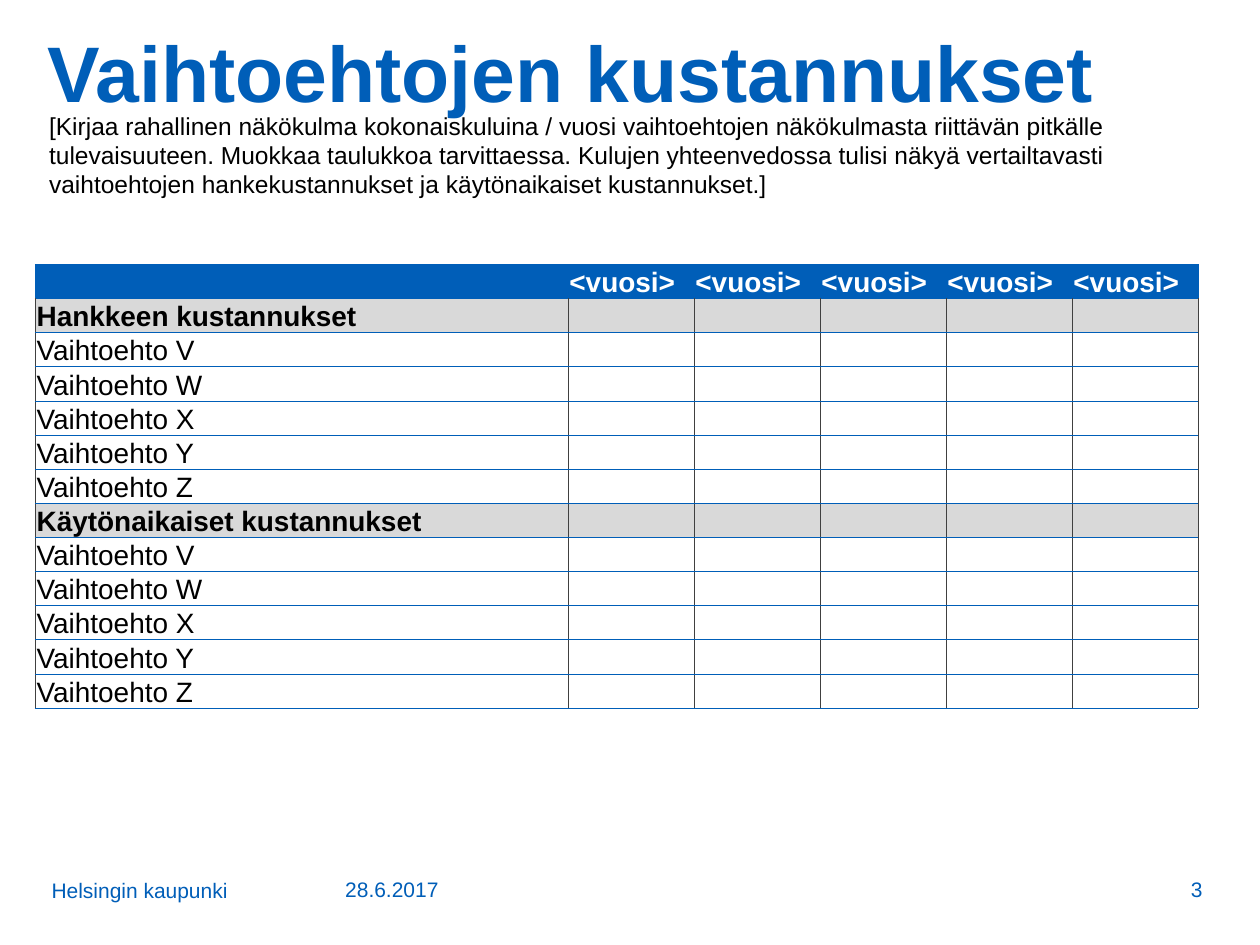
from lxml import etree
from pptx import Presentation
from pptx.dml.color import RGBColor
from pptx.enum.text import MSO_ANCHOR, PP_ALIGN
from pptx.oxml.ns import qn
from pptx.util import Cm, Pt

TOP, BOTTOM = MSO_ANCHOR.TOP, MSO_ANCHOR.BOTTOM
LEFT, RIGHT = PP_ALIGN.LEFT, PP_ALIGN.RIGHT
FONT = "Arial"
COLORS = {"blue": "005EB8", "grey": "D9D9D9", "dark": "404040",
          "black": "000000", "white": "FFFFFF"}

TITLE = "Vaihtoehtojen kustannukset"
GUIDE = ("[Kirjaa rahallinen näkökulma kokonaiskuluina / vuosi vaihtoehtojen "
         "näkökulmasta riittävän pitkälle tulevaisuuteen. Muokkaa taulukkoa "
         "tarvittaessa. Kulujen yhteenvedossa tulisi näkyä vertailtavasti "
         "vaihtoehtojen hankekustannukset ja käytönaikaiset kustannukset.]")
GROUPS = ["Hankkeen kustannukset", "Käytönaikaiset kustannukset"]
OPTIONS = [f"Vaihtoehto {name}" for name in "VWXYZ"]
YEARS = ["<vuosi>"] * 5
# text, (left, top, width, height) in cm, alignment
FOOTER = [
    ("Helsingin kaupunki", (0.79, 17.02, 5.92, 1.3), LEFT),
    ("28.6.2017", (6.71, 17.32, 3.94, 0.99), LEFT),
    ("3", (21.49, 17.32, 3, 0.99), RIGHT),
]
TABLE_AT = (0.71, 5.33)
LABEL_W, YEAR_W, ROW_H = 10.74, 2.54, 0.65


def write(frame, text, size=16, color="black", bold=False, align=LEFT, space=None):
    para = frame.paragraphs[0]
    para.alignment = align
    if space:
        para.line_spacing = space
    if not text:  # an empty cell keeps the row low only with its own size
        etree.SubElement(para._p, qn("a:endParaRPr"), sz=str(size * 100))
        return
    run = para.add_run()
    run.text = text
    font = run.font
    font.name, font.size, font.bold = FONT, Pt(size), bold
    font.color.rgb = RGBColor.from_string(COLORS[color])


def add_box(slide, text, place, inset=(0.25, 0.13), anchor=TOP, **style):
    frame = slide.shapes.add_textbox(*map(Cm, place)).text_frame
    frame.word_wrap = True
    frame.vertical_anchor = anchor
    frame.margin_left = frame.margin_right = Cm(inset[0])
    frame.margin_top = frame.margin_bottom = Cm(inset[1])
    write(frame, text, **style)


def set_edges(cell, sides):
    props = cell._tc.get_or_add_tcPr()
    for spot, (side, color) in enumerate(sides.items()):
        line = etree.Element(qn(f"a:ln{side}"), w=str(Pt(0.5)))
        fill = etree.SubElement(line, qn("a:solidFill"))
        etree.SubElement(fill, qn("a:srgbClr"), val=COLORS[color])
        props.insert(spot, line)


def add_costs(slide):
    rows = [("blue", ["", *YEARS])]
    blank = [""] * len(YEARS)
    for group in GROUPS:
        rows.append(("grey", [group, *blank]))
        rows += [("white", [option, *blank]) for option in OPTIONS]

    widths = [LABEL_W] + [YEAR_W] * len(YEARS)
    size = (sum(widths), ROW_H * len(rows))
    table = slide.shapes.add_table(len(rows), len(widths),
                                   *map(Cm, TABLE_AT + size)).table
    for col, width in zip(table.columns, widths):
        col.width = Cm(width)
    for r, (fill, texts) in enumerate(rows):
        table.rows[r].height = Cm(ROW_H)
        head = fill == "blue"
        edge = "blue" if head else "dark"
        for c, text in enumerate(texts):
            cell = table.cell(r, c)
            cell.vertical_anchor = BOTTOM
            cell.margin_left = cell.margin_right = Cm(0.03)
            cell.margin_top, cell.margin_bottom = Cm(0.01), 0
            cell.fill.solid()
            cell.fill.fore_color.rgb = RGBColor.from_string(COLORS[fill])
            set_edges(cell, {"L": edge, "R": edge, "T": "blue", "B": "blue"})
            write(cell.text_frame, text, bold=fill != "white",
                  color="white" if head else "black")


def main():
    deck = Presentation()
    deck.slide_width, deck.slide_height = Cm(25.4), Cm(19.05)
    slide = deck.slides.add_slide(deck.slide_layouts[6])
    add_box(slide, TITLE, (0.71, 0.64, 23.42, 3.71),
            size=45, color="blue", bold=True, space=0.85)
    add_costs(slide)
    for text, place, align in FOOTER:
        add_box(slide, text, place, anchor=BOTTOM,
                size=12, color="blue", align=align)
    add_box(slide, GUIDE, (0.89, 2.13, 23.39, 2), inset=(0.1, 0.1), size=14)
    deck.save("out.pptx")


if __name__ == "__main__":
    main()
